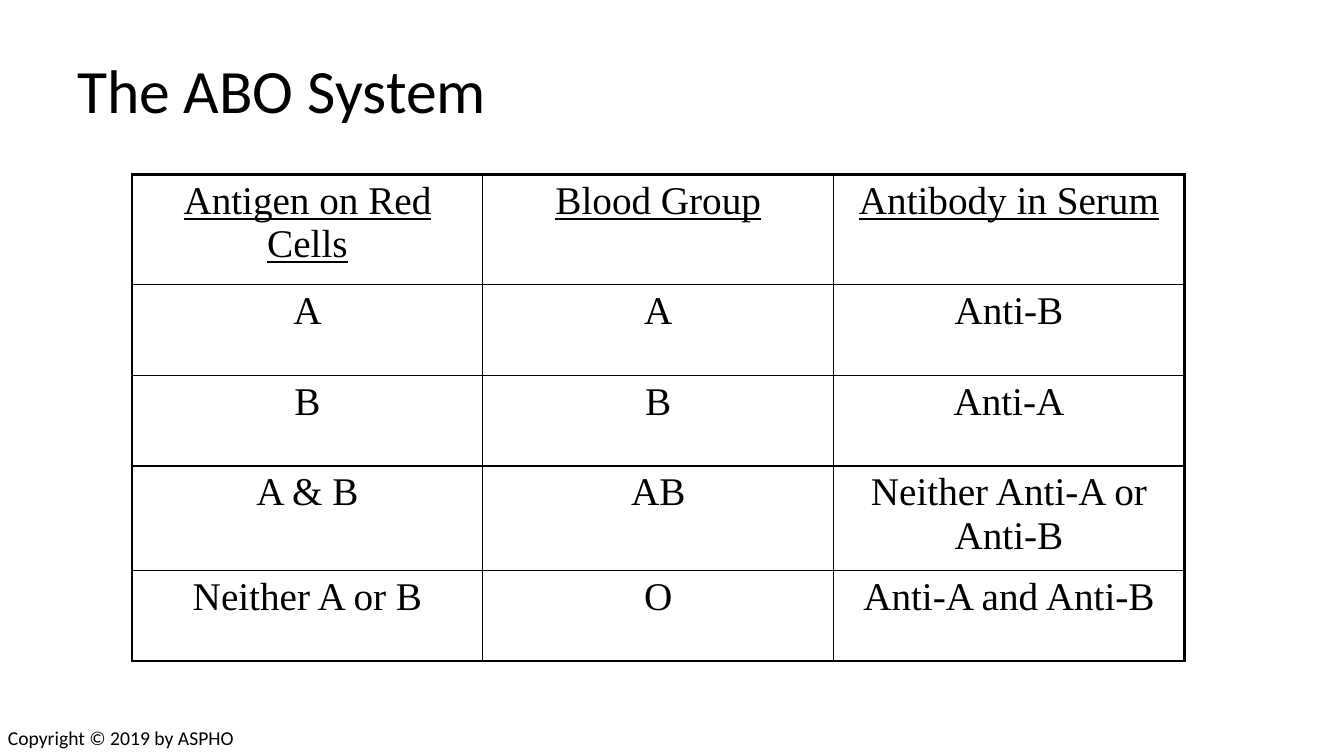
from dataclasses import dataclass

from lxml.etree import SubElement
from pptx import Presentation
from pptx.dml.color import RGBColor
from pptx.enum.text import MSO_ANCHOR as Anchor, PP_ALIGN as Align
from pptx.oxml.ns import qn
from pptx.util import Pt


@dataclass(frozen=True)
class Theme:
    """Colours, fonts, type sizes and line widths."""
    ink: str = "000000"
    sans: str = "Calibri"
    serif: str = "Times New Roman"
    title: float = 44
    body: float = 28
    footer: float = 14
    frame: float = 2.25
    rule: float = 1


THEME = Theme()
ROWS = [
    ("Antigen on Red Cells", "Blood Group", "Antibody in Serum"),
    ("A", "A", "Anti-B"),
    ("B", "B", "Anti-A"),
    ("A & B", "AB", "Neither Anti-A or Anti-B"),
    ("Neither A or B", "O", "Anti-A and Anti-B"),
]


def style(p, name, size, underline=False):
    """Format every run of a paragraph."""
    for r in p.runs:
        r.font.name = name
        r.font.size = Pt(size)
        r.font.underline = underline
        r.font.color.rgb = RGBColor.from_string(THEME.ink)


def add_text(s, box, text, size, anchor=Anchor.TOP, spacing=1.0):
    """Place one line of sans text in a box."""
    tf = s.shapes.add_textbox(*map(Pt, box)).text_frame
    tf.word_wrap = True
    tf.vertical_anchor = anchor
    tf.text = text
    p = tf.paragraphs[0]
    p.line_spacing = spacing
    style(p, THEME.sans, size)


def add_borders(cell, widths):
    """Draw the left, right, top and bottom borders of a cell."""
    tc_pr = cell._tc.get_or_add_tcPr()
    for i, (side, width) in enumerate(zip("LRTB", widths)):
        ln = tc_pr.makeelement(qn(f"a:ln{side}"), {"w": str(Pt(width))})
        fill = SubElement(ln, qn("a:solidFill"))
        SubElement(fill, qn("a:srgbClr"), val=THEME.ink)
        tc_pr.insert(i, ln)


def add_blood_groups(s, box, rows, head_height):
    """Place the blood group table, with a taller heading row."""
    n_rows, n_cols = len(rows), len(rows[0])
    x, y, w, h = box
    table = s.shapes.add_table(n_rows, n_cols, *map(Pt, box)).table
    table.first_row = table.horz_banding = False
    for col in table.columns:
        col.width = Pt(w / n_cols)
    for i, values in enumerate(rows):
        row_height = (h - head_height) / (n_rows - 1)
        table.rows[i].height = Pt(row_height if i else head_height)
        for j, value in enumerate(values):
            cell = table.cell(i, j)
            cell.fill.background()
            cell.margin_left = cell.margin_right = Pt(9.4)
            cell.margin_top = cell.margin_bottom = Pt(3.6)
            cell.text = value
            p = cell.text_frame.paragraphs[0]
            p.alignment = Align.CENTER
            style(p, THEME.serif, THEME.body, underline=i == 0)
            outer = (j == 0, j == n_cols - 1, i == 0, i == n_rows - 1)
            add_borders(cell, [THEME.frame if o else THEME.rule for o in outer])


def build_slide(s, box):
    """Place the title, table and copyright line on the slide."""
    x, y, w, h = box
    add_text(s, (x + 48, y + 21.6, w - 96, 90), "The ABO System",
             THEME.title, Anchor.MIDDLE, 0.9)
    add_blood_groups(s, (x + 94.3, y + 124.6, 751.7, 338), ROWS, 78.5)
    add_text(s, (x - 1.5, y + h - 25.2, 245, 24.5),
             "Copyright © 2019 by ASPHO", THEME.footer)


def main():
    """Build and save the presentation."""
    prs = Presentation()
    prs.slide_width, prs.slide_height = Pt(960), Pt(540)
    s = prs.slides.add_slide(prs.slide_layouts[6])
    build_slide(s, (0, 0, 960, 540))
    prs.save("out.pptx")


if __name__ == "__main__":
    main()
